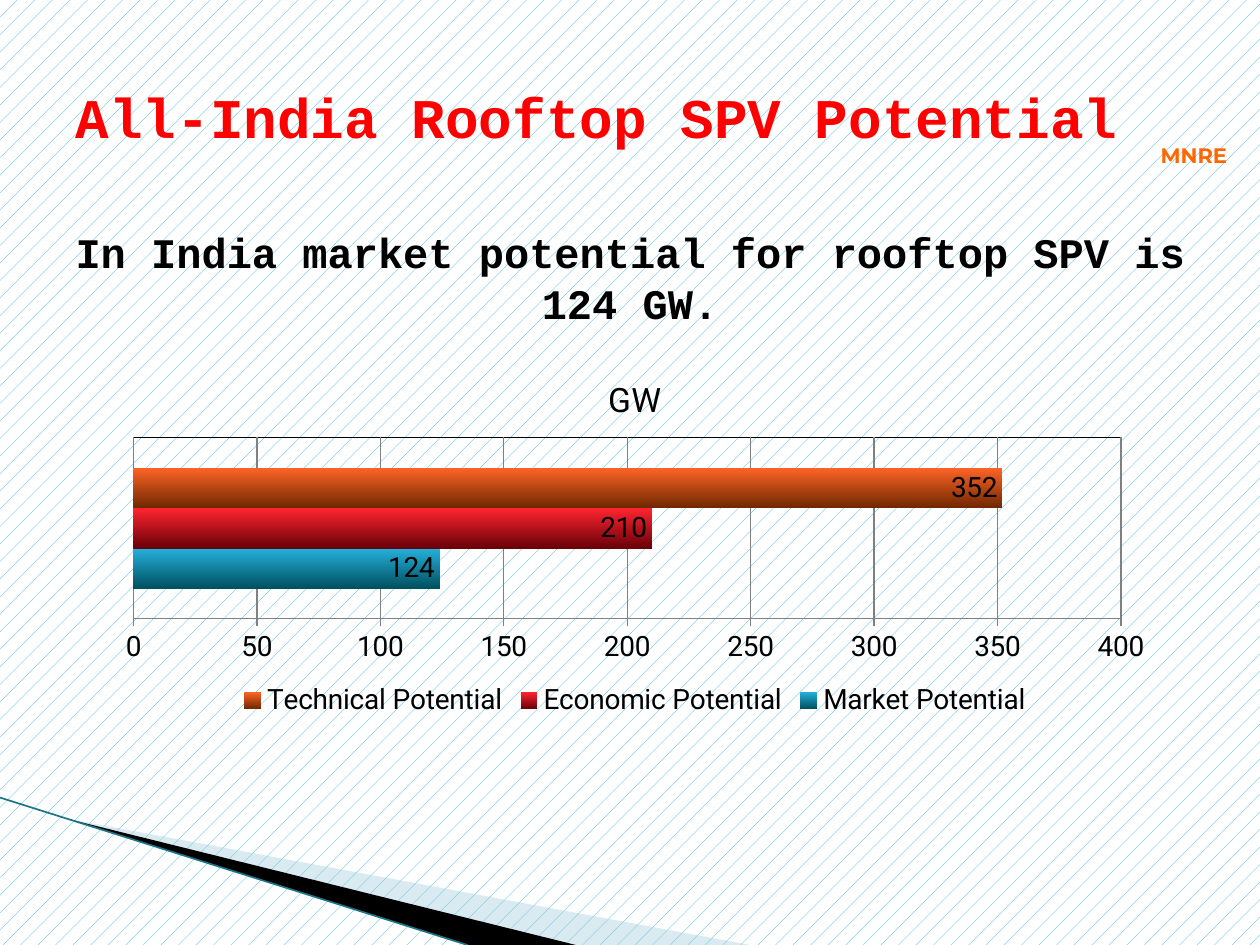
from lxml import etree
from pptx import Presentation
from pptx.chart.data import CategoryChartData
from pptx.dml.color import RGBColor
from pptx.enum.chart import (XL_CHART_TYPE, XL_LABEL_POSITION,
                             XL_LEGEND_POSITION, XL_TICK_MARK)
from pptx.enum.dml import MSO_PATTERN
from pptx.enum.shapes import MSO_CONNECTOR
from pptx.enum.text import MSO_ANCHOR, PP_ALIGN
from pptx.oxml.ns import qn
from pptx.util import Inches, Pt

BAR = XL_CHART_TYPE.BAR_CLUSTERED
INSIDE_END = XL_LABEL_POSITION.INSIDE_END
BOTTOM = XL_LEGEND_POSITION.BOTTOM
OUTSIDE, NO_TICK = XL_TICK_MARK.OUTSIDE, XL_TICK_MARK.NONE
DOTS = MSO_PATTERN.PERCENT_5
STRAIGHT = MSO_CONNECTOR.STRAIGHT
LEFT, CENTER = PP_ALIGN.LEFT, PP_ALIGN.CENTER
TOP, MIDDLE = MSO_ANCHOR.TOP, MSO_ANCHOR.MIDDLE

COLUMNS, ROWS = 100, 75  # slide grid
CELL = Inches(0.1)
HEADING_FONT, LABEL_FONT, CHART_FONT = "Courier New", "Montserrat", "Roboto"
COLORS = {
    "paper": "FFFFFF", "dots": "1FAECD", "title": "FF0000",
    "text": "000000", "label": "FF6600", "grid": "808080",
    "wedge": "A0CBDC", "blade": "000000", "edge": "1B7587",
}
# name, value, gradient top, gradient bottom
SERIES = [
    ("Market Potential", 124, "25B0DC", "00505F"),
    ("Economic Potential", 210, "FF2530", "6A0008"),
    ("Technical Potential", 352, "FF6426", "702800"),
]


def rgb(name):
    return RGBColor.from_string(COLORS[name])


def cells(*values):
    """Turn grid positions into slide lengths."""
    return [int(value * CELL) for value in values]


def style_font(font, name, size, color, bold=False):
    font.name, font.size, font.bold = name, Pt(size), bold
    font.color.rgb = rgb(color)


def write_text(shape, text, font, size, color, alignment, anchor, wrap=True):
    frame = shape.text_frame
    frame.word_wrap = wrap
    frame.vertical_anchor = anchor
    paragraph = frame.paragraphs[0]
    paragraph.alignment = alignment
    run = paragraph.add_run()
    run.text = text
    style_font(run.font, font, size, color, bold=True)


def add_background(slide):
    fill = slide.background.fill
    fill.patterned()
    fill.pattern = DOTS
    fill.fore_color.rgb = rgb("dots")
    fill.back_color.rgb = rgb("paper")


def add_wedge(slide, points, color, opacity=100):
    corners = [tuple(cells(*point)) for point in points]
    builder = slide.shapes.build_freeform(*corners[0], scale=1.0)
    builder.add_line_segments(corners[1:], close=True)
    shape = builder.convert_to_shape()
    shape.shadow.inherit = False
    shape.line.fill.background()
    shape.fill.solid()
    shape.fill.fore_color.rgb = rgb(color)
    if opacity < 100:
        fill_color = shape.fill._xPr.find(qn("a:solidFill"))[0]
        etree.SubElement(fill_color, qn("a:alpha")).set("val", str(opacity * 1000))


def add_corner(slide, box):
    """Wedges that run from the left edge to the bottom of the box."""
    left, top, width, height = box
    bottom = top + height
    tip = (left + 5.4, top + 1.7)
    add_wedge(slide, [tip, (left + width, bottom), (left + 45.6, bottom)],
              "wedge", opacity=40)
    add_wedge(slide, [tip, (left + 45.7, bottom), (left + 37.2, bottom)], "blade")
    line = slide.shapes.add_connector(
        STRAIGHT, *cells(left, top, left + 37.1, bottom))
    line.line.color.rgb = rgb("edge")
    line.line.width = Pt(0.95)
    etree.SubElement(line._element.spPr, qn("a:effectLst"))


def add_title(slide, box):
    title = slide.shapes.title
    title.left, title.top, title.width, title.height = cells(*box)
    write_text(title, "All-India Rooftop SPV Potential",
               HEADING_FONT, 32, "title", LEFT, MIDDLE)


def add_statement(slide, box):
    shape = slide.shapes.add_textbox(*cells(*box))
    write_text(shape, "In India market potential for rooftop SPV is 124 GW.",
               HEADING_FONT, 24, "text", CENTER, TOP)


def add_ministry_label(slide, box):
    shape = slide.shapes.add_textbox(*cells(*box))
    write_text(shape, "MNRE", LABEL_FONT, 12, "label", CENTER, TOP, wrap=False)


def style_series(series, top_color, bottom_color):
    fill = series.format.fill
    fill.gradient()
    fill.gradient_angle = 270
    for stop, color in zip(fill.gradient_stops, (top_color, bottom_color)):
        stop.color.rgb = RGBColor.from_string(color)
    labels = series.data_labels
    labels.show_value = True
    labels.position = INSIDE_END
    labels.number_format, labels.number_format_is_linked = "#,##0", False
    style_font(labels.font, CHART_FONT, 16, "text")


def add_potential_chart(slide, box):
    data = CategoryChartData()
    data.categories = ["1"]
    for name, value, *_ in SERIES:
        data.add_series(name, [value])
    chart = slide.shapes.add_chart(BAR, *cells(*box), data).chart
    style_font(chart.font, CHART_FONT, 16, "text")

    # Title and legend
    chart.has_title = True
    run = chart.chart_title.text_frame.paragraphs[0].add_run()
    run.text = "GW"
    style_font(run.font, CHART_FONT, 19.2, "text")
    chart.has_legend = True
    chart.legend.position = BOTTOM
    chart.legend.include_in_layout = False

    # Bars
    plot = chart.plots[0]
    plot.gap_width = 150
    plot.vary_by_categories = False
    for series, (_, _, top_color, bottom_color) in zip(plot.series, SERIES):
        style_series(series, top_color, bottom_color)

    # Axes
    category_axis, value_axis = chart.category_axis, chart.value_axis
    category_axis.visible = False
    category_axis.has_major_gridlines = True
    category_axis.major_gridlines.format.line.color.rgb = rgb("text")
    value_axis.minimum_scale, value_axis.maximum_scale = 0, 400
    value_axis.major_unit = 50
    value_axis.major_tick_mark = OUTSIDE
    value_axis.minor_tick_mark = NO_TICK
    value_axis.has_major_gridlines = True
    labels = value_axis.tick_labels
    labels.number_format, labels.number_format_is_linked = "#,##0", False
    for part in (value_axis, value_axis.major_gridlines):
        part.format.line.color.rgb = rgb("grid")
        part.format.line.width = Pt(0.75)


def main():
    presentation = Presentation()
    presentation.slide_width = COLUMNS * CELL
    presentation.slide_height = ROWS * CELL
    slide = presentation.slides.add_slide(presentation.slide_layouts[5])
    add_background(slide)
    add_corner(slide, (0, 63.3, 59.5, ROWS - 63.3))
    add_statement(slide, (5, 17.5, COLUMNS - 10, 10))
    add_title(slide, (5, 3, COLUMNS - 10, 12.5))
    add_potential_chart(slide, (8.3, 28.3, 84.2, 29))
    add_ministry_label(slide, (90.7, 10.8, 8.1, 3))
    presentation.save("out.pptx")


if __name__ == "__main__":
    main()
